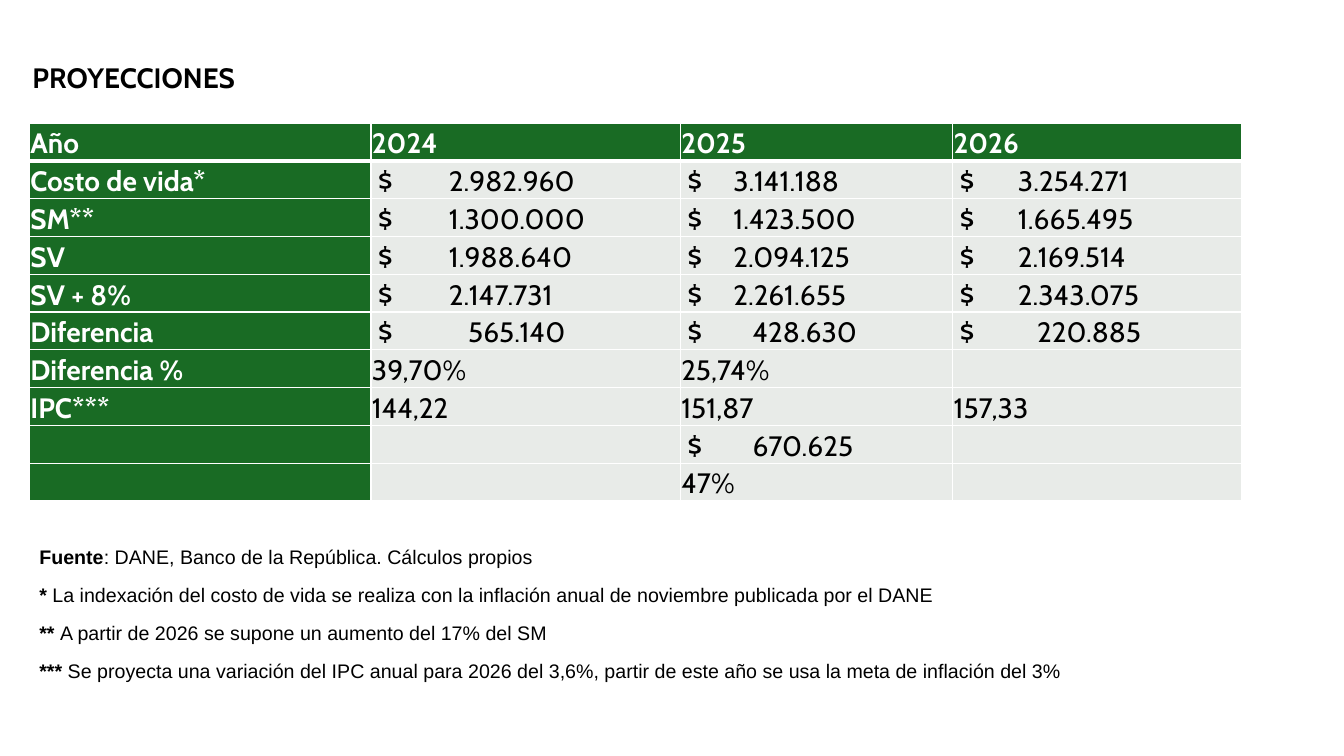
from lxml import etree
from pptx import Presentation
from pptx.dml.color import RGBColor
from pptx.enum.text import MSO_ANCHOR, MSO_AUTO_SIZE, PP_ALIGN
from pptx.oxml.ns import qn
from pptx.util import Pt

MIDDLE, BOTTOM = MSO_ANCHOR.MIDDLE, MSO_ANCHOR.BOTTOM
JUSTIFY = PP_ALIGN.JUSTIFY
FIT_SHAPE = MSO_AUTO_SIZE.SHAPE_TO_FIT_TEXT

COLORS = {"green": "196B24", "grey": "E8EBE8", "white": "FFFFFF", "black": "000000"}

COLUMN_WIDTHS = [244, 221, 194.5, 206.5]
ROW_HEIGHT = 27
AMOUNT_TABS = [0, 55, 37.2, 46]  # where the amounts start in each column
SHORT_AMOUNT_SHIFT = 13.7  # extra indent for amounts under a million

PROJECTIONS = [
    ["Año", "2024", "2025", "2026"],
    ["Costo de vida*", "$2.982.960", "$3.141.188", "$3.254.271"],
    ["SM**", "$1.300.000", "$1.423.500", "$1.665.495"],
    ["SV", "$1.988.640", "$2.094.125", "$2.169.514"],
    ["SV + 8%", "$2.147.731", "$2.261.655", "$2.343.075"],
    ["Diferencia", "$565.140", "$428.630", "$220.885"],
    ["Diferencia %", "39,70%", "25,74%", ""],
    ["IPC***", "144,22", "151,87", "157,33"],
    ["", "", "$670.625", ""],
    ["", "", "47%", ""],
]

NOTES = [
    ("Fuente", ": DANE, Banco de la República. Cálculos propios"),
    ("* ", "La indexación del costo de vida se realiza con la inflación anual "
           "de noviembre publicada por el DANE"),
    ("** ", "A partir de 2026 se supone un aumento del 17% del SM"),
    ("*** ", "Se proyecta una variación del IPC anual para 2026 del 3,6%, "
             "partir de este año se usa la meta de inflación del 3%"),
]


def style_font(font, name, size, color, bold=None):
    font.name, font.size, font.bold = name, Pt(size), bold
    font.color.rgb = RGBColor.from_string(COLORS[color])


def add_heading(slide, left, top, width, height):
    heading = slide.shapes.title
    heading.left, heading.top = Pt(left), Pt(top)
    heading.width, heading.height = Pt(width), Pt(height)
    frame = heading.text_frame
    frame.text = "PROYECCIONES"
    frame.vertical_anchor = MIDDLE
    frame.auto_size = FIT_SHAPE
    paragraph = frame.paragraphs[0]
    paragraph.alignment = JUSTIFY
    paragraph.line_spacing = 1.0
    style_font(paragraph.font, "Cabin", 20, "black", True)


def set_borders(cell, row):
    """White rules, with a thick one under the header row."""
    widths = {"a:lnL": 1, "a:lnR": 1,
              "a:lnT": 3 if row == 1 else 1, "a:lnB": 3 if row == 0 else 1}
    properties = cell._tc.get_or_add_tcPr()
    for side, width in widths.items():
        line = etree.SubElement(properties, qn(side), w=str(Pt(width)))
        fill = etree.SubElement(line, qn("a:solidFill"))
        etree.SubElement(fill, qn("a:srgbClr"), val=COLORS["white"])


def set_tab(paragraph, position):
    properties = paragraph._p.get_or_add_pPr()
    tabs = etree.Element(qn("a:tabLst"))
    etree.SubElement(tabs, qn("a:tab"), pos=str(Pt(position)), algn="l")
    properties.insert(0, tabs)


def fill_cell(cell, row, column, value):
    is_heading = row == 0 or column == 0
    cell.margin_left = cell.margin_right = cell.margin_top = Pt(0.7)
    cell.margin_bottom = 0
    cell.vertical_anchor = BOTTOM
    set_borders(cell, row)
    cell.fill.solid()
    cell.fill.fore_color.rgb = RGBColor.from_string(
        COLORS["green" if is_heading else "grey"])

    paragraph = cell.text_frame.paragraphs[0]
    style_font(paragraph.font, "Cabin", 20,
               "white" if is_heading else "black", is_heading)
    if value.startswith("$"):
        amount = value[1:]
        shift = SHORT_AMOUNT_SHIFT if amount.count(".") == 1 else 0
        set_tab(paragraph, AMOUNT_TABS[column] + shift)
        value = f" $\t{amount}"
    if value:
        paragraph.add_run().text = value


def add_projection_table(slide, left, top):
    table = slide.shapes.add_table(
        len(PROJECTIONS), len(COLUMN_WIDTHS), Pt(left), Pt(top),
        Pt(sum(COLUMN_WIDTHS)), Pt(ROW_HEIGHT * len(PROJECTIONS))).table
    table.horz_banding = False
    for column, width in zip(table.columns, COLUMN_WIDTHS):
        column.width = Pt(width)
    for row, values in enumerate(PROJECTIONS):
        table.rows[row].height = Pt(ROW_HEIGHT)
        for column, value in enumerate(values):
            fill_cell(table.cell(row, column), row, column, value)


def add_notes(slide, left, top, width, height):
    frame = slide.shapes.add_textbox(
        Pt(left), Pt(top), Pt(width), Pt(height)).text_frame
    frame.word_wrap = True
    frame.auto_size = FIT_SHAPE
    for index, (mark, note) in enumerate(NOTES):
        paragraph = frame.add_paragraph() if index else frame.paragraphs[0]
        paragraph.alignment = JUSTIFY
        paragraph.line_spacing = 1.15
        paragraph.space_after = Pt(8)
        style_font(paragraph.font, "Arial", 14, "black")
        for text, bold in ((mark, True), (note, False)):
            run = paragraph.add_run()
            run.text = text
            run.font.bold = bold


def main():
    presentation = Presentation()
    presentation.slide_width, presentation.slide_height = Pt(960), Pt(540)
    slide = presentation.slides.add_slide(presentation.slide_layouts[5])
    add_heading(slide, 16, 39.6, 175.7, 31.5)
    add_notes(slide, 21, 383, 879, 108.7)
    add_projection_table(slide, 21, 88)
    presentation.save("out.pptx")


if __name__ == "__main__":
    main()
